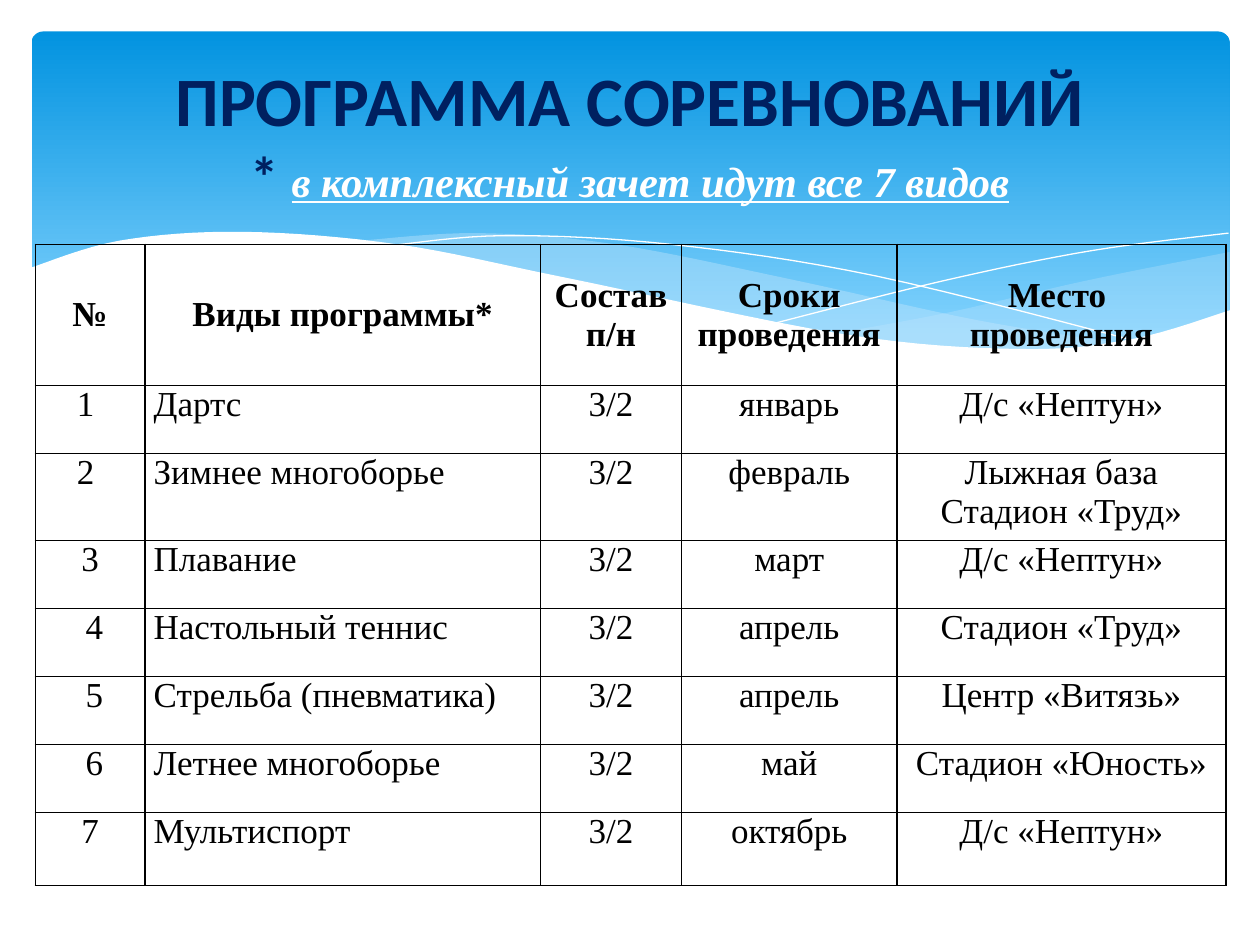
from dataclasses import dataclass

from lxml import etree
from pptx import Presentation
from pptx import util as u
from pptx.dml.color import RGBColor
from pptx.enum import shapes, text
from pptx.oxml import ns

NAVY = RGBColor(0x00, 0x20, 0x60)
BLUE = RGBColor(0x02, 0x93, 0xE0)
SKY = RGBColor(0x83, 0xD3, 0xFE)
PALE = RGBColor(0xC6, 0xE7, 0xFC)
WHITE = RGBColor(0xFF, 0xFF, 0xFF)
BLACK = RGBColor(0x00, 0x00, 0x00)
SERIF = "Times New Roman"
CURVE_STEPS = 8

Point = tuple[float, float]


@dataclass
class Wave:
    """Smooth edges joined into a filled area, or a hairline when not closed."""
    edges: list[list[Point]]
    color: RGBColor
    opacity: int = 100
    closed: bool = True


@dataclass
class Style:
    size: float
    color: RGBColor
    font: str = SERIF
    bold: bool = True
    italic: bool = False
    underline: bool = False


WAVES = [
    Wave([[(9.76, 2), (8.61, 2.23), (7.53, 2.48), (6.61, 2.65)],
          [(6.61, 2.65), (7.32, 2.74), (8.03, 2.78), (8.89, 2.72), (9.76, 2.47)]], PALE, 29),
    Wave([[(8.93, 2.73), (7.75, 2.54), (6.29, 2.22), (4.89, 1.94), (3.8, 1.85), (2.86, 1.91)],
          [(2.86, 1.91), (4.49, 2.22), (6.01, 2.55), (7.22, 2.74), (8.07, 2.78), (8.93, 2.73)]],
         PALE, 40),
    Wave([[(3.09, 1.95), (4.01, 1.87), (5.33, 1.94), (6.95, 2.19), (9.07, 2.72)]],
         WHITE, closed=False),
    Wave([[(6.13, 2.57), (7.48, 2.23), (8.66, 1.99), (9.75, 1.85)]], WHITE, closed=False),
    Wave([[(9.77, 2.46), (8.99, 2.69), (8.09, 2.77), (6.68, 2.65), (4.47, 2.2),
           (3.16, 1.94), (1.93, 1.84), (0.95, 1.91), (0.23, 2.13)],
          [(0.23, 3.29), (9.77, 3.29)]], WHITE),
]

COLUMNS = [0.87, 3.14, 1.12, 1.71, 2.61]
HEIGHTS = [1.12, 0.54, 0.69, 0.54, 0.54, 0.54, 0.54, 0.58]
HEADER = ["№", "Виды программы*", "Состав\nп/н", "Сроки проведения", "Место \nпроведения"]
EVENTS = [
    ("1 ", "Дартс", "январь", "Д/с «Нептун»"),
    ("2 ", "Зимнее многоборье", "февраль", "Лыжная база\nСтадион «Труд»"),
    ("3", "Плавание", "март", "Д/с «Нептун»"),
    (" 4", "Настольный теннис", "апрель", "Стадион «Труд»"),
    (" 5", "Стрельба (пневматика)", "апрель", "Центр «Витязь»"),
    (" 6", "Летнее многоборье", "май", "Стадион «Юность»"),
    ("7", "Мультиспорт", "октябрь", "Д/с «Нептун»"),
]
TEAM = "3/2"


def smooth(knots: list[Point]) -> list[Point]:
    """Run a Catmull-Rom curve through the knots."""
    padded = [knots[0], *knots, knots[-1]]
    curve = [knots[0]]
    for before, start, end, after in zip(padded, padded[1:], padded[2:], padded[3:]):
        for step in range(1, CURVE_STEPS + 1):
            t = step / CURVE_STEPS
            curve.append(tuple(
                b + t / 2 * (c - a + t * (2 * a - 5 * b + 4 * c - d
                                          + t * (3 * b - a - 3 * c + d)))
                for a, b, c, d in zip(before, start, end, after)))
    return curve


def format_span(span, style: Style) -> None:
    font = span.font
    font.name, font.size = style.font, u.Pt(style.size)
    font.color.rgb = style.color
    font.bold, font.italic, font.underline = style.bold, style.italic, style.underline


def add_banner(page) -> None:
    banner = page.shapes.add_shape(
        shapes.MSO_SHAPE.ROUNDED_RECTANGLE,
        u.Inches(0.25), u.Inches(0.25), u.Inches(9.51), u.Inches(2.7))
    banner.adjustments[0] = 0.034
    banner.shadow.inherit = False
    banner.line.fill.background()
    banner.fill.gradient()
    banner.fill.gradient_angle = 270
    for stop, color, position in zip(banner.fill.gradient_stops, (BLUE, SKY), (0, 0.9)):
        stop.color.rgb, stop.position = color, position


def add_wave(page, wave: Wave) -> None:
    points = [(u.Inches(x), u.Inches(y)) for edge in wave.edges for x, y in smooth(edge)]
    builder = page.shapes.build_freeform(*points[0])
    builder.add_line_segments(points[1:], close=wave.closed)
    shape = builder.convert_to_shape()
    shape.shadow.inherit = False
    if not wave.closed:
        shape.fill.background()
        shape.line.color.rgb = wave.color
        shape.line.width = u.Pt(0)
        return
    shape.line.fill.background()
    shape.fill.solid()
    shape.fill.fore_color.rgb = wave.color
    if wave.opacity < 100:
        color = shape.element.spPr.find(".//" + ns.qn("a:srgbClr"))
        etree.SubElement(color, ns.qn("a:alpha"), val=str(wave.opacity * 1000))


def add_borders(cell) -> None:
    """Put a black one-point line on each side, ahead of the cell's fill."""
    properties = cell._tc.get_or_add_tcPr()
    for index, side in enumerate(("lnL", "lnR", "lnT", "lnB")):
        line = etree.Element(ns.qn("a:" + side), w=str(int(u.Pt(1))))
        fill = etree.SubElement(line, ns.qn("a:solidFill"))
        etree.SubElement(fill, ns.qn("a:srgbClr"), val=str(BLACK))
        properties.insert(index, line)


def fill_cell(cell, words: str, align, anchor, style: Style) -> None:
    cell.margin_left = cell.margin_right = u.Inches(0.07)
    cell.margin_top = cell.margin_bottom = 0
    cell.vertical_anchor = anchor
    cell.fill.background()
    cell.text_frame.text = words
    for para in cell.text_frame.paragraphs:
        para.alignment = align
        for span in para.runs:
            format_span(span, style)
    add_borders(cell)


def add_program(page) -> None:
    rows = [HEADER] + [(number, event, TEAM, month, place)
                       for number, event, month, place in EVENTS]
    table = page.shapes.add_table(
        len(rows), len(COLUMNS), u.Inches(0.28), u.Inches(1.94),
        u.Inches(sum(COLUMNS)), u.Inches(sum(HEIGHTS))).table
    table.first_row = table.horz_banding = False
    for column, width in zip(table.columns, COLUMNS):
        column.width = u.Inches(width)
    for row, height in zip(table.rows, HEIGHTS):
        row.height = u.Inches(height)
    for r, row in enumerate(rows):
        is_header = r == 0
        anchor = text.MSO_ANCHOR.MIDDLE if is_header else text.MSO_ANCHOR.TOP
        for c, words in enumerate(row):
            is_event = c == 1 and not is_header
            align = text.PP_ALIGN.JUSTIFY if is_event else text.PP_ALIGN.CENTER
            fill_cell(table.cell(r, c), words, align, anchor,
                      Style(20, BLACK, bold=is_header))


def add_title(page) -> None:
    box = page.shapes.add_textbox(u.Inches(0.5), u.Inches(0.37), u.Inches(9), u.Inches(1.37))
    frame = box.text_frame
    frame.word_wrap = True
    frame.vertical_anchor = text.MSO_ANCHOR.MIDDLE
    para = frame.paragraphs[0]
    para.alignment = text.PP_ALIGN.CENTER
    para.text = "ПРОГРАММА СОРЕВНОВАНИЙ"
    para.add_line_break()
    for words in ("* ", "в комплексный зачет идут все 7 видов"):
        para.add_run().text = words
    styles = (Style(39.6, NAVY, "Calibri"), Style(32.4, NAVY, "Calibri"),
              Style(24.3, WHITE, italic=True, underline=True))
    for span, style in zip(para.runs, styles):
        format_span(span, style)


def main() -> None:
    deck = Presentation()
    deck.slide_width, deck.slide_height = u.Inches(10), u.Inches(7.5)
    page = deck.slides.add_slide(deck.slide_layouts[6])
    add_banner(page)
    for wave in WAVES:
        add_wave(page, wave)
    add_program(page)
    add_title(page)
    deck.save("out.pptx")


if __name__ == "__main__":
    main()
